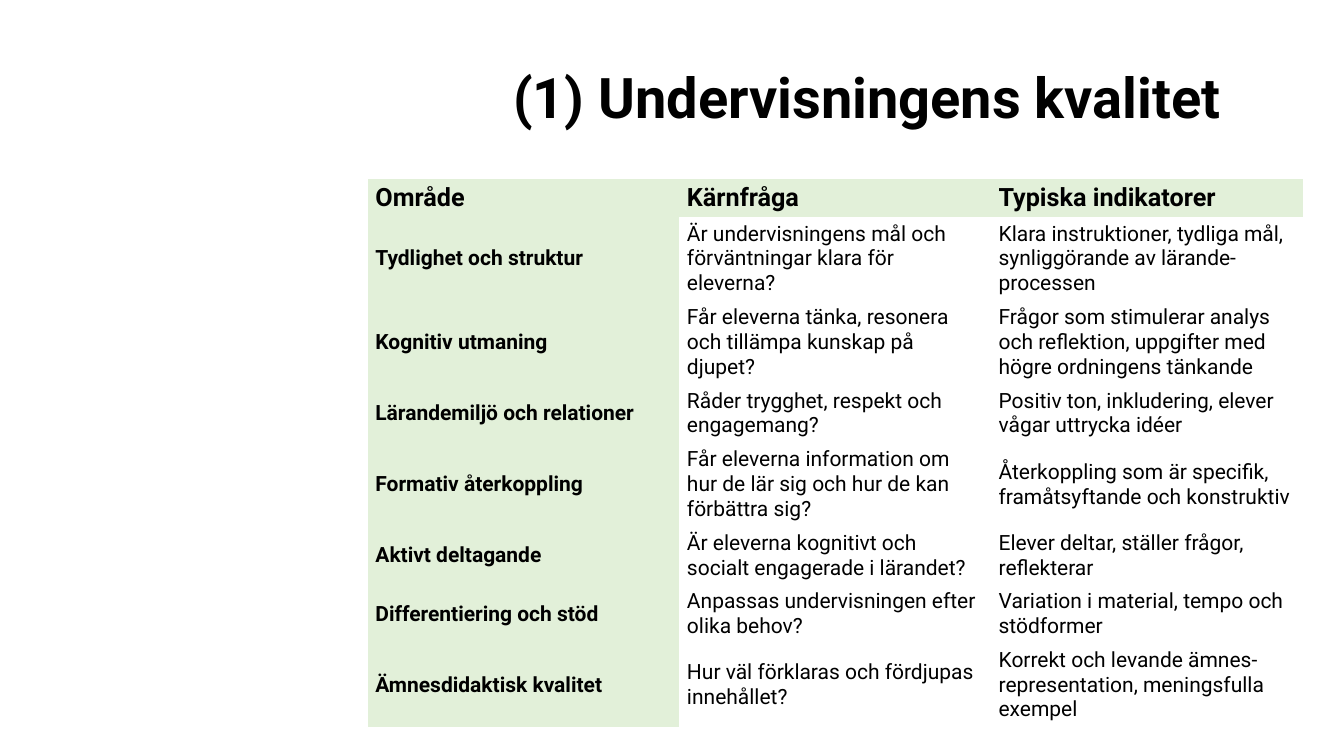
from dataclasses import dataclass

from pptx import Presentation
from pptx.dml.color import RGBColor
from pptx.enum.text import MSO_ANCHOR, MSO_AUTO_SIZE, PP_ALIGN
from pptx.util import Cm, Pt

MIDDLE = MSO_ANCHOR.MIDDLE
CENTER = PP_ALIGN.CENTER
GROW = MSO_AUTO_SIZE.SHAPE_TO_FIT_TEXT
NO_GRID = "{2D5ABB26-0587-4C30-8999-92F81FD0307C}"


@dataclass(frozen=True)
class Theme:
    font: str = "Roboto"
    ink: RGBColor = RGBColor(0, 0, 0)
    green: RGBColor = RGBColor(0xE2, 0xF0, 0xD9)
    title: int = 40
    head: int = 18
    body: int = 15


THEME = Theme()

TITLE = "(1) Undervisningens kvalitet"
HEADS = ("Område", "Kärnfråga", "Typiska indikatorer")

# Area, key question, indicators, number of text lines
AREAS = (
    ("Tydlighet och struktur",
     "Är undervisningens mål och förväntningar klara för eleverna?",
     "Klara instruktioner, tydliga mål, synliggörande av lärande-processen", 3),
    ("Kognitiv utmaning",
     "Får eleverna tänka, resonera och tillämpa kunskap på djupet?",
     "Frågor som stimulerar analys och reflektion, uppgifter med högre ordningens tänkande", 3),
    ("Lärandemiljö och relationer",
     "Råder trygghet, respekt och engagemang?",
     "Positiv ton, inkludering, elever vågar uttrycka idéer", 2),
    ("Formativ återkoppling",
     "Får eleverna information om hur de lär sig och hur de kan förbättra sig?",
     "Återkoppling som är specifik, framåtsyftande och konstruktiv", 3),
    ("Aktivt deltagande",
     "Är eleverna kognitivt och socialt engagerade i lärandet?",
     "Elever deltar, ställer frågor, reflekterar", 2),
    ("Differentiering och stöd",
     "Anpassas undervisningen efter olika behov?",
     "Variation i material, tempo och stödformer", 2),
    ("Ämnesdidaktisk kvalitet",
     "Hur väl förklaras och fördjupas innehållet?",
     "Korrekt och levande ämnes-representation, meningsfulla exempel", 3),
)
HEAD_ROW = Cm(0.95)
ROWS = {2: Cm(1.47), 3: Cm(2.11)}


def write(frame, text, size, bold):
    frame.text = text
    font = frame.paragraphs[0].runs[0].font
    font.name, font.size, font.bold = THEME.font, Pt(size), bold
    font.color.rgb = THEME.ink


def add_title(slide, left, top, width, height):
    frame = slide.shapes.add_textbox(left, top, width, height).text_frame
    frame.word_wrap = True
    frame.auto_size = GROW
    write(frame, TITLE, THEME.title, True)
    frame.paragraphs[0].alignment = CENTER


def fill_cell(cell, text, size, marked):
    cell.vertical_anchor = MIDDLE
    cell.margin_left = cell.margin_right = Cm(0.19)
    cell.margin_top = cell.margin_bottom = Cm(0.1)
    if marked:
        cell.fill.solid()
        cell.fill.fore_color.rgb = THEME.green
    else:
        cell.fill.background()
    write(cell.text_frame, text, size, marked)


def add_grid(slide, left, top, width):
    heights = [HEAD_ROW] + [ROWS[area[-1]] for area in AREAS]
    texts = [HEADS] + [area[:-1] for area in AREAS]
    frame = slide.shapes.add_table(len(texts), len(HEADS), left, top, width, sum(heights))
    frame.element.xpath(".//a:tableStyleId")[0].text = NO_GRID
    table = frame.table
    table.horz_banding = False

    for col in table.columns:
        col.width = width // len(HEADS)
    for r, (height, row) in enumerate(zip(heights, texts)):
        table.rows[r].height = height
        size = THEME.body if r else THEME.head
        for c, text in enumerate(row):
            fill_cell(table.cell(r, c), text, size, r == 0 or c == 0)


def main():
    deck = Presentation()
    deck.slide_width, deck.slide_height = Cm(33.87), Cm(19.05)
    slide = deck.slides.add_slide(deck.slide_layouts[6])
    add_title(slide, Cm(9.83), Cm(1.45), Cm(24.03), Cm(1.96))
    add_grid(slide, Cm(9.27), Cm(4.5), Cm(23.56))
    deck.save("out.pptx")


if __name__ == "__main__":
    main()
